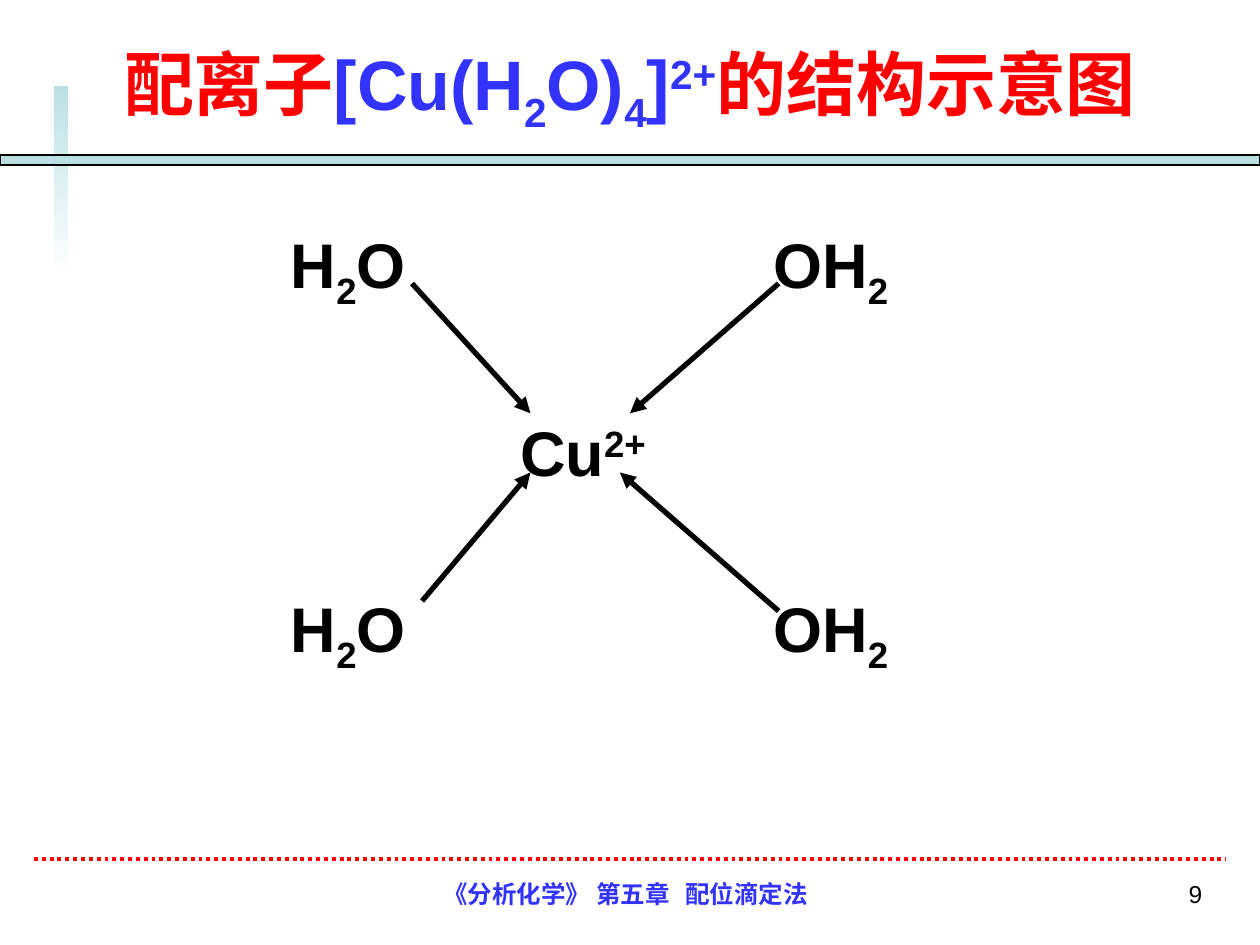
from typing import NamedTuple

from lxml import etree
from pptx import Presentation
from pptx.dml.color import RGBColor
from pptx.enum.dml import MSO_LINE
from pptx.enum.shapes import MSO_CONNECTOR, MSO_SHAPE
from pptx.enum.text import MSO_ANCHOR, PP_ALIGN
from pptx.oxml.ns import qn
from pptx.util import Inches, Pt

STRAIGHT = MSO_CONNECTOR.STRAIGHT
RECTANGLE = MSO_SHAPE.RECTANGLE
DOTTED = MSO_LINE.ROUND_DOT  # written as sysDot
LEFT, CENTER, RIGHT = PP_ALIGN.LEFT, PP_ALIGN.CENTER, PP_ALIGN.RIGHT
TOP, MIDDLE = MSO_ANCHOR.TOP, MSO_ANCHOR.MIDDLE

FONT = "Arial"
COLORS = {"red": "FF0000", "blue": "3333FF", "black": "000000",
          "teal": "BBE0E3", "white": "FFFFFF"}
SUB, SUPER = -25, 30


class Span(NamedTuple):
    text: str
    baseline: int = 0
    color: str = "black"


class Label(NamedTuple):
    left: float
    top: float
    width: float
    height: float
    spans: list[Span]
    size: int
    align: PP_ALIGN = LEFT
    anchor: MSO_ANCHOR = TOP
    bold: bool = True


class Arrow(NamedTuple):
    start: tuple[float, float]
    end: tuple[float, float]


def color(name: str) -> RGBColor:
    return RGBColor.from_string(COLORS[name])


def add_label(page, label: Label):
    box = page.shapes.add_textbox(*map(Inches, label[:4]))
    frame = box.text_frame
    frame.word_wrap = True
    frame.vertical_anchor = label.anchor
    para = frame.paragraphs[0]
    para.alignment = label.align
    for span in label.spans:
        run = para.add_run()
        run.text = span.text
        run.font.color.rgb = color(span.color)
        if span.baseline:
            run.font._element.set("baseline", str(span.baseline * 1000))
    para.font.name = FONT
    para.font.size = Pt(label.size)
    para.font.bold = label.bold
    return para


def add_line(page, start, end, line_color: str, width: float):
    line = page.shapes.add_connector(STRAIGHT, *map(Inches, (*start, *end)))
    line.line.color.rgb = color(line_color)
    line.line.width = Pt(width)
    etree.SubElement(line._element.spPr, qn("a:effectLst"))
    return line


def add_arrow(page, arrow: Arrow) -> None:
    line = add_line(page, arrow.start, arrow.end, "black", 3)
    etree.SubElement(line.line._get_or_add_ln(), qn("a:tailEnd"), type="triangle")


def add_bar(page, left: float, top: float, width: float, height: float):
    bar = page.shapes.add_shape(RECTANGLE, *map(Inches, (left, top, width, height)))
    bar.shadow.inherit = False
    return bar


def add_decoration(page) -> None:
    # Fading vertical bar
    fading = add_bar(page, 0.43, 0.68, 0.11, 1.49)
    fading.fill.gradient()
    fading.fill.gradient_angle = 270
    for stop, name in zip(fading.fill.gradient_stops, ("teal", "white")):
        stop.color.rgb = color(name)
    fading.line.fill.background()
    # Rule under the title
    rule = add_bar(page, 0, 1.23, 10, 0.08)
    rule.fill.solid()
    rule.fill.fore_color.rgb = color("teal")
    rule.line.color.rgb = color("black")
    rule.line.width = Pt(0.75)
    # Dotted rule above the footer
    add_line(page, (0.27, 6.82), (9.73, 6.82), "red", 2.25).line.dash_style = DOTTED


def add_footer(page) -> None:
    chapter = add_label(page, Label(3.42, 6.93, 3.17, 0.52, [
        Span("《分析化学》 第五章\t配位滴定法", color="blue")], 14))
    tabs = etree.Element(qn("a:tabLst"))
    etree.SubElement(tabs, qn("a:tab"), pos=str(Inches(1.92)), algn="l")
    chapter._p.get_or_add_pPr().insert(0, tabs)
    add_label(page, Label(7.31, 6.93, 2.33, 0.52, [Span("9")], 14, RIGHT, bold=False))


TITLE = Label(0.5, 0.23, 9, 0.94, [
    Span("配离子", color="red"),
    Span("[Cu(H", color="blue"), Span("2", SUB, "blue"),
    Span("O)", color="blue"), Span("4", SUB, "blue"),
    Span("]", color="blue"), Span("2+", SUPER, "blue"),
    Span("的结构示意图", color="red"),
], 40, CENTER, MIDDLE)

WATER_LEFT = [Span("H"), Span("2", SUB), Span("O")]
WATER_RIGHT = [Span("OH"), Span("2", SUB)]
COPPER = Label(4.03, 3.23, 1.4, 0.7, [Span("Cu"), Span("2+", SUPER)], 36)
LIGANDS = [Label(left, top, 1.3, 0.7, spans, 36)
           for top in (1.74, 4.63)
           for left, spans in ((2.21, WATER_LEFT), (6.04, WATER_RIGHT))]

BONDS = [
    Arrow((3.27, 2.25), (4.21, 3.28)),
    Arrow((3.35, 4.77), (4.21, 3.75)),
    Arrow((6.18, 4.85), (4.92, 3.75)),
    Arrow((6.18, 2.25), (5, 3.28)),
]


def main() -> None:
    deck = Presentation()
    deck.slide_width, deck.slide_height = Inches(10), Inches(7.5)
    page = deck.slides.add_slide(deck.slide_layouts[6])
    add_decoration(page)
    for label in (TITLE, COPPER, *LIGANDS):
        add_label(page, label)
    add_footer(page)
    for bond in BONDS:
        add_arrow(page, bond)
    deck.save("out.pptx")


if __name__ == "__main__":
    main()
